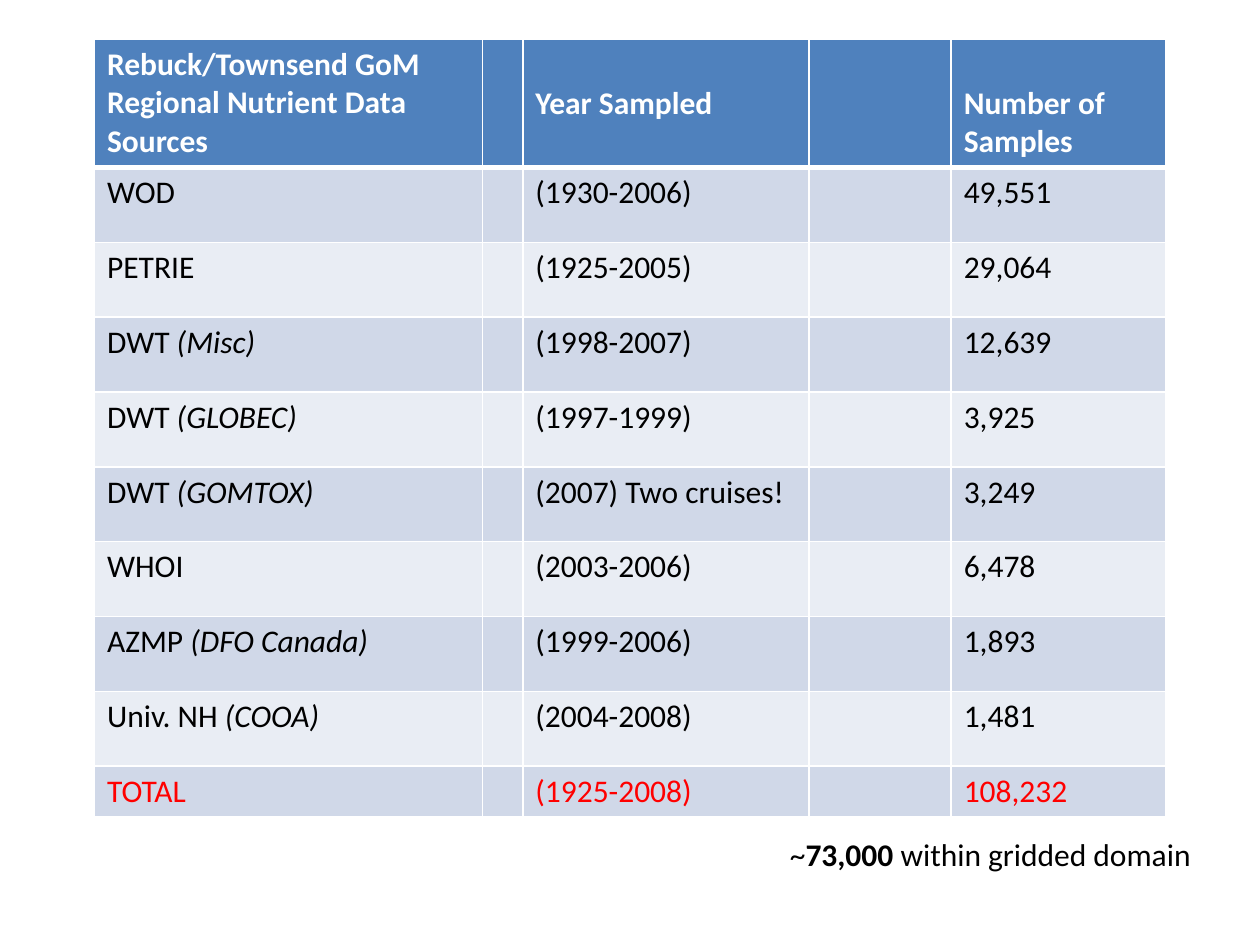
from dataclasses import dataclass

from lxml.etree import SubElement
from pptx import Presentation
from pptx.dml.color import RGBColor as Color
from pptx.oxml.ns import qn
from pptx.util import Inches, Pt


@dataclass(frozen=True)
class Theme:
    font: str = "Calibri"
    size: int = 18
    text: str = "000000"
    header_text: str = "FFFFFF"
    total_text: str = "FF0000"
    header_fill: str = "4F81BD"
    bands: tuple = ("D0D8E8", "E9EDF4")
    border: str = "FFFFFF"
    border_width: int = 1
    header_rule: int = 3


THEME = Theme()

HEADINGS = ("Rebuck/Townsend GoM Regional Nutrient Data Sources",
            "Year Sampled", "Number of Samples")
# Source, italic note, years, samples
SOURCES = [
    ("WOD", "", "(1930-2006)", "49,551"),
    ("PETRIE", "", "(1925-2005)", "29,064"),
    ("DWT ", "(Misc)", "(1998-2007)", "12,639"),
    ("DWT ", "(GLOBEC)", "(1997-1999)", "3,925"),
    ("DWT ", "(GOMTOX)", "(2007) Two cruises!", "3,249"),
    ("WHOI", "", "(2003-2006)", "6,478"),
    ("AZMP ", "(DFO Canada)", "(1999-2006)", "1,893"),
    ("Univ. NH ", "(COOA)", "(2004-2008)", "1,481"),
    ("TOTAL", "", "(1925-2008)", "108,232"),
]
TEXT_COLUMNS = (0, 2, 4)  # the columns between them are spacers
COLUMN_WIDTHS = (3.08, 0.32, 2.27, 1.13, 1.7)
HEADER_HEIGHT, TOTAL_HEIGHT = 1.01, 0.4
HEADING_DROP = 0.36  # lowers the short headings by one line


def add_run(paragraph, text, color=THEME.text, **formats):
    run = paragraph.add_run()
    run.text = text
    values = {"name": THEME.font, "size": Pt(THEME.size), **formats}
    for name, value in values.items():
        setattr(run.font, name, value)
    run.font.color.rgb = Color.from_string(color)


def style_cell(cell, fill, top_width, bottom_width):
    properties = cell._tc.get_or_add_tcPr()
    widths = {"L": THEME.border_width, "R": THEME.border_width,
              "T": top_width, "B": bottom_width}
    for side, width in widths.items():
        line = SubElement(properties, qn(f"a:ln{side}"), w=str(Pt(width)))
        solid = SubElement(line, qn("a:solidFill"))
        SubElement(solid, qn("a:srgbClr"), val=THEME.border)
    cell.fill.solid()
    cell.fill.fore_color.rgb = Color.from_string(fill)


def add_source_table(slide, left, top, width, height):
    row_count = len(SOURCES) + 1
    table = slide.shapes.add_table(
        row_count, len(COLUMN_WIDTHS), Inches(left), Inches(top),
        Inches(width), Inches(height)).table

    # Grid
    for column, column_width in zip(table.columns, COLUMN_WIDTHS):
        column.width = Inches(column_width)
    body_height = (height - HEADER_HEIGHT - TOTAL_HEIGHT) / (row_count - 2)
    heights = [HEADER_HEIGHT] + [body_height] * (row_count - 2) + [TOTAL_HEIGHT]
    for index, (row, row_height) in enumerate(zip(table.rows, heights)):
        row.height = Inches(row_height)
        fill = THEME.bands[(index - 1) % 2] if index else THEME.header_fill
        top_rule = THEME.header_rule if index == 1 else THEME.border_width
        bottom_rule = THEME.border_width if index else THEME.header_rule
        for cell in row.cells:
            style_cell(cell, fill, top_rule, bottom_rule)

    # Headings
    for column, heading in zip(TEXT_COLUMNS, HEADINGS):
        cell = table.cell(0, column)
        if column:
            cell.margin_top = Inches(HEADING_DROP)
        add_run(cell.text_frame.paragraphs[0], heading,
                THEME.header_text, bold=True)

    # Sources and total
    for index, (source, note, years, samples) in enumerate(SOURCES, 1):
        color = THEME.total_text if index == len(SOURCES) else THEME.text
        for column, text in zip(TEXT_COLUMNS, (source, years, samples)):
            paragraph = table.cell(index, column).text_frame.paragraphs[0]
            add_run(paragraph, text, color)
            if note and column == 0:
                add_run(paragraph, note, color, italic=True)


def add_domain_note(slide, left, top, width, height):
    box = slide.shapes.add_textbox(
        Inches(left), Inches(top), Inches(width), Inches(height))
    box.text_frame.word_wrap = True
    paragraph = box.text_frame.paragraphs[0]
    add_run(paragraph, "~")
    add_run(paragraph, "73,000", bold=True)
    add_run(paragraph, " within gridded domain")


def main():
    presentation = Presentation()
    presentation.slide_width = Inches(10)
    presentation.slide_height = Inches(7.5)
    slide = presentation.slides.add_slide(presentation.slide_layouts[6])
    add_source_table(slide, 0.75, 0.31, 8.5, 6.16)
    add_domain_note(slide, 6.17, 6.58, 3.58, 0.4)
    presentation.save("out.pptx")


if __name__ == "__main__":
    main()
